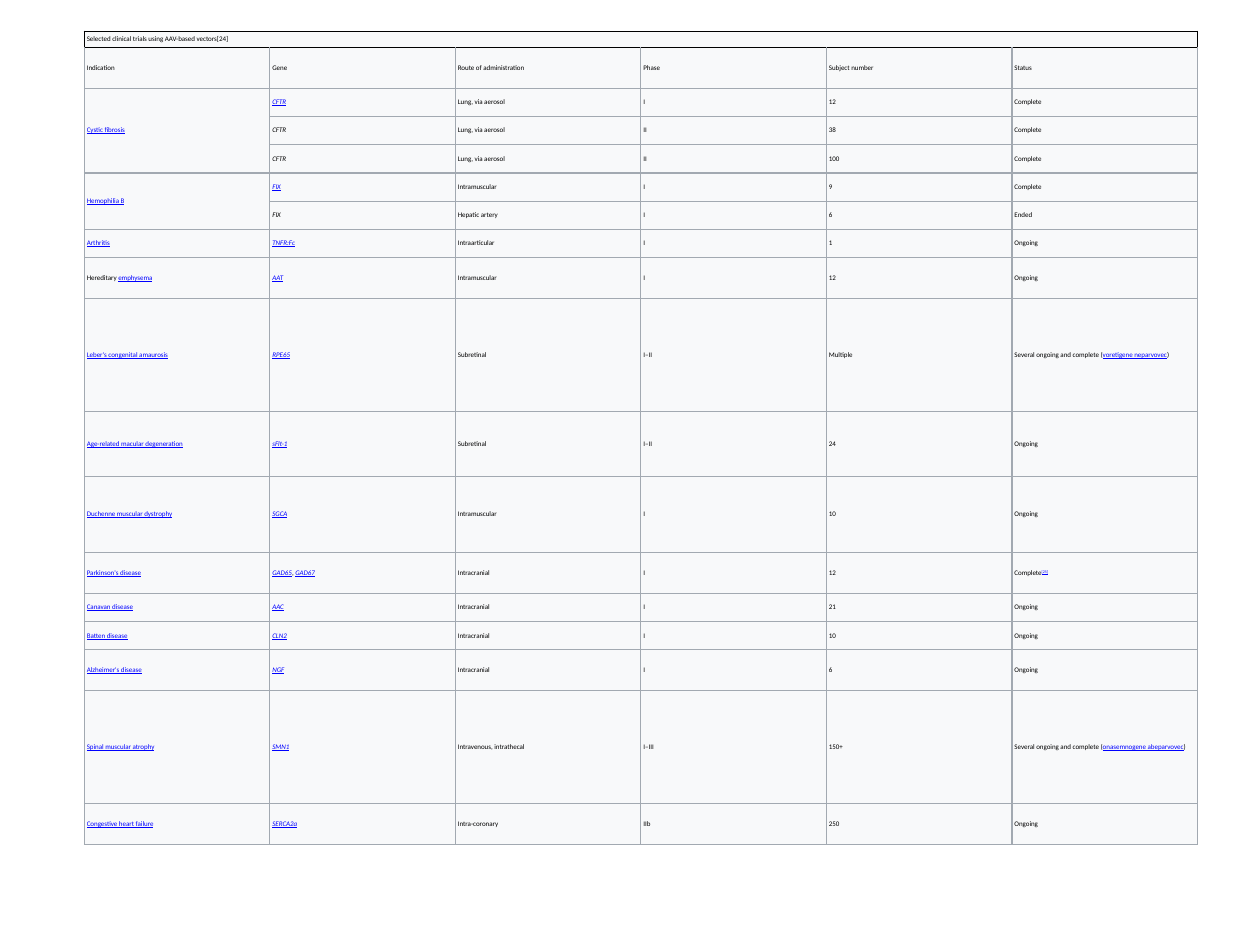
from lxml import etree
from pptx import Presentation
from pptx import util as u
from pptx.dml.color import RGBColor
from pptx.enum import text
from pptx.oxml.ns import qn

BLACK = RGBColor(0x00, 0x00, 0x00)
LINK_BLUE = RGBColor(0x00, 0x00, 0xFF)
CELL_GREY = RGBColor(0xF8, 0xF9, 0xFA)
BORDER_GREY = RGBColor(0xA2, 0xA9, 0xB1)

GENE_COLUMN = 1
LINK_MARK = "|"
GENE_SEPARATOR = ", "
CITATION = "[25]"
TITLE = "Selected clinical trials using AAV-based vectors[24]"
HEADINGS = ["Indication", "Gene", "Route of administration", "Phase", "Subject number", "Status"]

SHORT, MEDIUM, TALL = 0.57, 0.82, 2.28
TRIALS = [
    (SHORT, "|Cystic fibrosis|", "|CFTR|", "Lung, via aerosol", "I", "12", "Complete"),
    (SHORT, "", "CFTR", "Lung, via aerosol", "II", "38", "Complete"),
    (SHORT, "", "CFTR", "Lung, via aerosol", "II", "100", "Complete"),
    (SHORT, "|Hemophilia B|", "|FIX|", "Intramuscular", "I", "9", "Complete"),
    (SHORT, "", "FIX", "Hepatic artery", "I", "6", "Ended"),
    (SHORT, "|Arthritis|", "|TNFR:Fc|", "Intraarticular", "I", "1", "Ongoing"),
    (MEDIUM, "Hereditary |emphysema|", "|AAT|", "Intramuscular", "I", "12", "Ongoing"),
    (TALL, "|Leber's congenital amaurosis|", "|RPE65|", "Subretinal", "I–II", "Multiple",
     "Several ongoing and complete (|voretigene neparvovec|)"),
    (1.31, "|Age-related macular degeneration|", "|sFlt-1|", "Subretinal", "I–II", "24", "Ongoing"),
    (1.54, "|Duchenne muscular dystrophy|", "|SGCA|", "Intramuscular", "I", "10", "Ongoing"),
    (MEDIUM, "|Parkinson's disease|", "|GAD65|, |GAD67|", "Intracranial", "I", "12", "Complete|[25]|"),
    (SHORT, "|Canavan disease|", "|AAC|", "Intracranial", "I", "21", "Ongoing"),
    (SHORT, "|Batten disease|", "|CLN2|", "Intracranial", "I", "10", "Ongoing"),
    (MEDIUM, "|Alzheimer's disease|", "|NGF|", "Intracranial", "I", "6", "Ongoing"),
    (TALL, "|Spinal muscular atrophy|", "|SMN1|", "Intravenous, intrathecal", "I–III", "150+",
     "Several ongoing and complete (|onasemnogene abeparvovec|)"),
    (MEDIUM, "|Congestive heart failure|", "|SERCA2a|", "Intra-coronary", "IIb", "250", "Ongoing"),
]


def set_borders(cell, sides):
    properties = cell._tc.get_or_add_tcPr()
    for index, (side, (color, width)) in enumerate(sides.items()):
        line = etree.Element(qn(f"a:ln{side}"), w=str(u.Pt(width)))
        fill = etree.SubElement(line, qn("a:solidFill"))
        etree.SubElement(fill, qn("a:srgbClr"), val=str(color))
        properties.insert(index, line)


def format_cell(cell, sides):
    cell.vertical_anchor = text.MSO_ANCHOR.MIDDLE
    cell.margin_left = cell.margin_right = u.Cm(0.05)
    cell.margin_top = cell.margin_bottom = u.Cm(0.03)
    cell.fill.solid()
    cell.fill.fore_color.rgb = CELL_GREY
    set_borders(cell, sides)


def write_cell(cell, content, italic=False):
    paragraph = cell.text_frame.paragraphs[0]
    paragraph.font.size = u.Pt(4)
    for index, part in enumerate(content.split(LINK_MARK)):
        if not part:
            continue
        is_link = index % 2 == 1
        run = paragraph.add_run()
        run.text = part
        run.font.name = "Calibri"
        run.font.size = u.Pt(4)
        run.font.color.rgb = LINK_BLUE if is_link else BLACK
        run.font.underline = is_link
        run.font.italic = italic and part != GENE_SEPARATOR
        if is_link and part == CITATION:
            run.font._element.set("baseline", "30000")


def add_trials_table(slide, left, top, width):
    heights = [0.33, MEDIUM] + [trial[0] for trial in TRIALS]
    contents = [[TITLE] + [""] * (len(HEADINGS) - 1), HEADINGS] + [trial[1:] for trial in TRIALS]
    frame = slide.shapes.add_table(
        len(contents), len(HEADINGS), u.Cm(left), u.Cm(top), u.Cm(width), u.Cm(sum(heights)))
    table = frame.table
    table.first_row = False
    table.horz_banding = False
    for column in table.columns:
        column.width = u.Cm(width / len(HEADINGS))

    grey, black = (BORDER_GREY, 0.75), (BLACK, 1)
    for row_index, (height, row) in enumerate(zip(heights, contents)):
        table.rows[row_index].height = u.Cm(height)
        sides = dict.fromkeys("LRTB", black if row_index == 0 else grey)
        if row_index == 1:
            sides["T"] = black
        for column_index, content in enumerate(row):
            cell = table.cell(row_index, column_index)
            format_cell(cell, sides)
            write_cell(cell, content, italic=column_index == GENE_COLUMN and row_index > 1)

    table.cell(0, 0).merge(table.cell(0, len(HEADINGS) - 1))
    starts = [index for index, row in enumerate(contents) if row[0]] + [len(contents)]
    for start, following in zip(starts, starts[1:]):
        if following - start > 1:
            table.cell(start, 0).merge(table.cell(following - 1, 0))


def main():
    presentation = Presentation()
    presentation.slide_width = u.Cm(25.4)
    presentation.slide_height = u.Cm(19.05)
    slide = presentation.slides.add_slide(presentation.slide_layouts[6])
    add_trials_table(slide, left=1.7, top=0.63, width=22.44)
    presentation.save("out.pptx")


if __name__ == "__main__":
    main()
